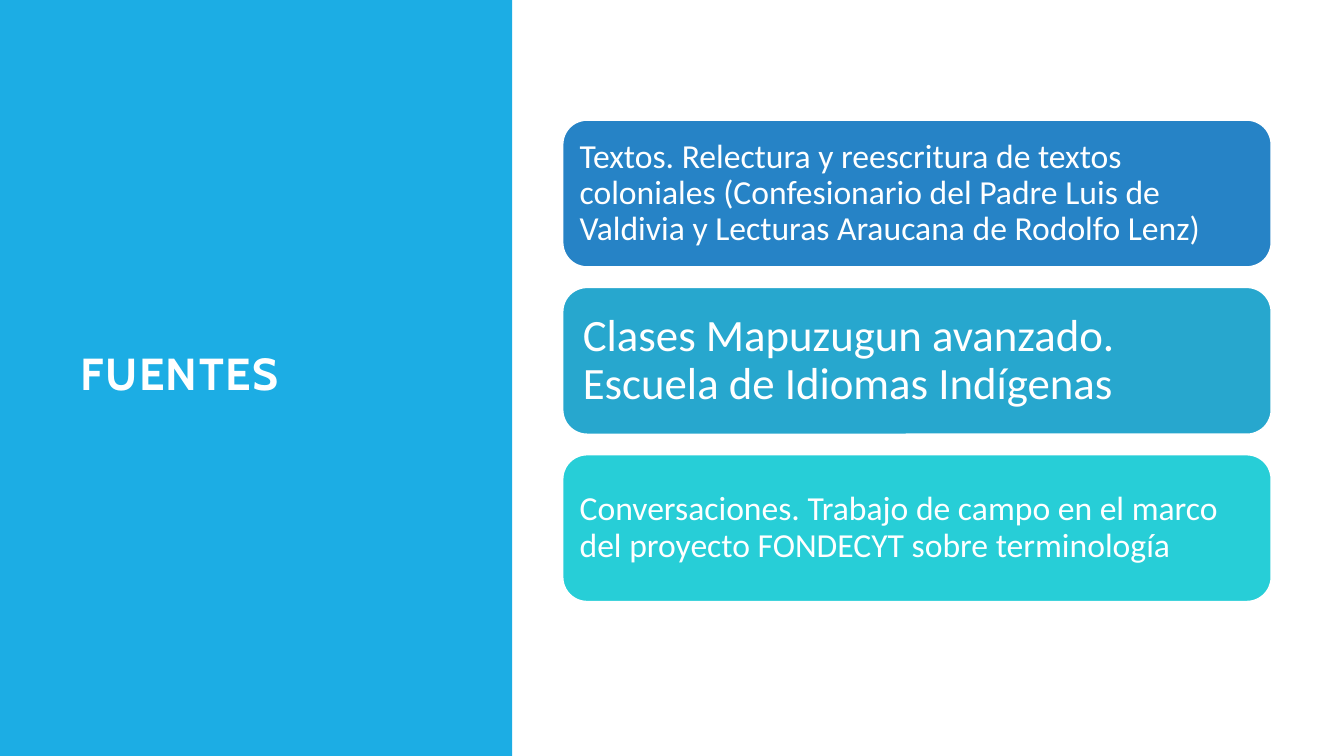
from pptx import Presentation
from pptx.dml.color import RGBColor
from pptx.enum.shapes import MSO_SHAPE as Shape
from pptx.enum.text import MSO_ANCHOR as Anchor, PP_ALIGN as Align
from pptx.util import Inches, Pt

WHITE = RGBColor(0xFF, 0xFF, 0xFF)
SKY = RGBColor(0x1C, 0xAD, 0xE4)
BLUE = RGBColor(0x26, 0x83, 0xC6)
TEAL = RGBColor(0x27, 0xA7, 0xCE)
TURQUOISE = RGBColor(0x27, 0xCE, 0xD7)

TITLE = "FUENTES"
SOURCES = [
    ("Textos. Relectura y reescritura de textos coloniales (Confesionario del Padre "
     "Luis de Valdivia y Lecturas Araucana de Rodolfo Lenz)", BLUE, 24, 0.1),
    ("Clases Mapuzugun avanzado. Escuela de Idiomas Indígenas", TEAL, 32, 0.13),
    ("Conversaciones. Trabajo de campo en el marco del proyecto FONDECYT "
     "sobre terminología", TURQUOISE, 24, 0.1),
]

CARD_LEFT, CARD_TOP = 5.58, 1.19
CARD_WIDTH, CARD_HEIGHT, CARD_GAP = 7.03, 1.46, 0.2


def add_box(slide, kind, left, top, width, height, fill):
    shape = slide.shapes.add_shape(
        kind, Inches(left), Inches(top), Inches(width), Inches(height))
    shape.shadow.inherit = False
    shape.fill.solid()
    shape.fill.fore_color.rgb = fill
    shape.line.fill.background()
    return shape


def write_text(shape, text, font, size, spacing, inset_x, inset_y, bold=False):
    frame = shape.text_frame
    frame.word_wrap = True
    frame.vertical_anchor = Anchor.MIDDLE
    frame.margin_left = frame.margin_right = Inches(inset_x)
    frame.margin_top = frame.margin_bottom = Inches(inset_y)
    paragraph = frame.paragraphs[0]
    paragraph.alignment = Align.LEFT
    paragraph.line_spacing = spacing
    run = paragraph.add_run()
    run.text = text
    run.font.name = font
    run.font.size = Pt(size)
    run.font.bold = bold
    run.font.color.rgb = WHITE
    return run


def main():
    presentation = Presentation()
    presentation.slide_width = Inches(13.33)
    presentation.slide_height = Inches(7.5)
    slide = presentation.slides.add_slide(presentation.slide_layouts[5])

    title = slide.shapes.title
    title.left, title.top = Inches(0.7), Inches(0.7)
    title.width, title.height = Inches(3.74), Inches(6.09)
    run = write_text(title, TITLE, "Cabin", 32, 0.8, 0.1, 0.05, bold=True)
    run.font._element.set("spc", "100")

    panel = add_box(slide, Shape.RECTANGLE, 0, 0, 5.08, 7.5, SKY)
    title.element.addprevious(panel.element)

    for index, (text, color, size, inset) in enumerate(SOURCES):
        top = CARD_TOP + index * (CARD_HEIGHT + CARD_GAP)
        card = add_box(slide, Shape.ROUNDED_RECTANGLE, CARD_LEFT, top,
                       CARD_WIDTH, CARD_HEIGHT, color)
        card.line.color.rgb = WHITE
        card.line.width = Pt(1.25)
        write_text(card, text, "Calibri", size, 0.9, inset, inset)

    presentation.save("out.pptx")


if __name__ == "__main__":
    main()
